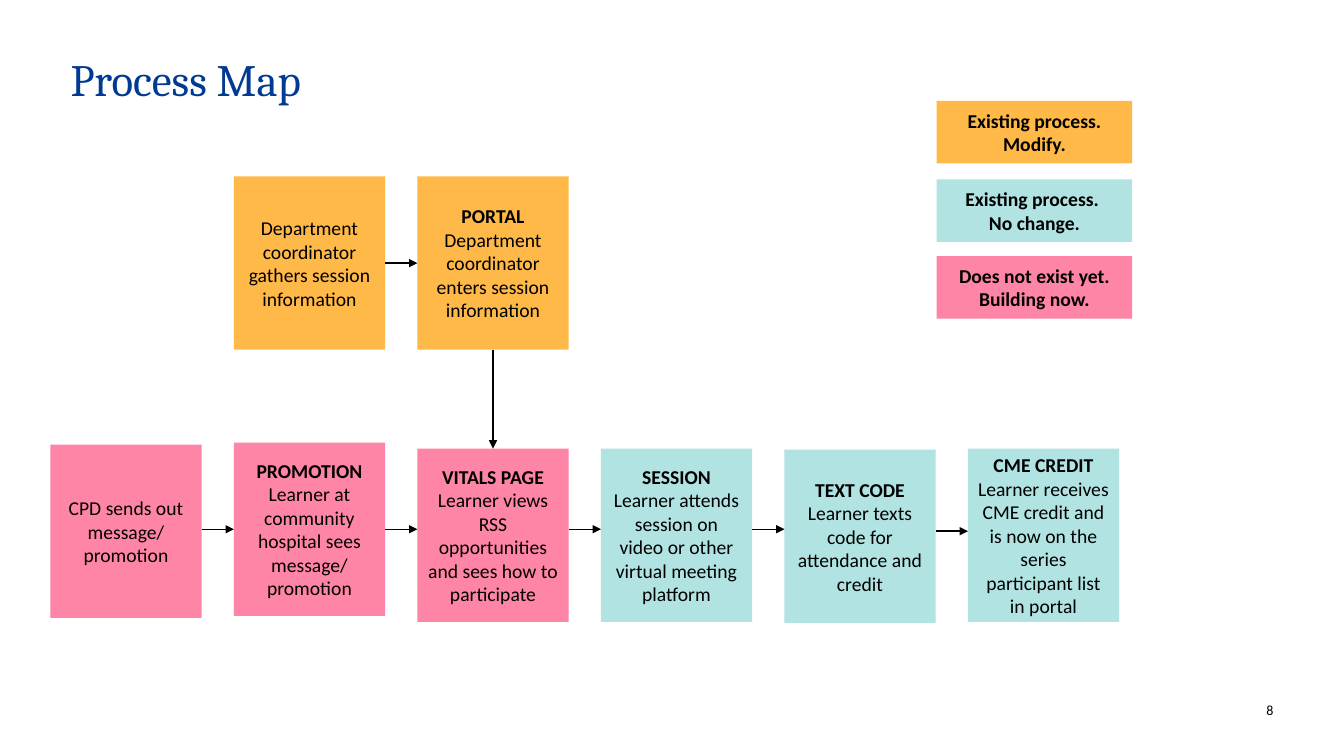
from dataclasses import dataclass

from lxml import etree
from pptx import Presentation
from pptx.dml.color import RGBColor
from pptx.enum.shapes import MSO_CONNECTOR, MSO_SHAPE
from pptx.enum.text import MSO_ANCHOR, MSO_AUTO_SIZE, PP_ALIGN
from pptx.oxml.ns import qn
from pptx.util import Inches, Pt

RECT = MSO_SHAPE.RECTANGLE
STRAIGHT = MSO_CONNECTOR.STRAIGHT
TOP, MIDDLE = MSO_ANCHOR.TOP, MSO_ANCHOR.MIDDLE
LEFT, CENTER, RIGHT = PP_ALIGN.LEFT, PP_ALIGN.CENTER, PP_ALIGN.RIGHT
NO_AUTOSIZE = MSO_AUTO_SIZE.NONE

COLORS = {
    "modify": "FFB948",
    "keep": "B0E3E2",
    "build": "FF85A6",
    "title": "003A93",
    "text": "000000",
}
STEP_LEFT, STEP_PITCH = 0.5, 1.82
STEP_W, STEP_H = 1.5, 1.72
LEGEND_LEFT, LEGEND_W, LEGEND_H = 9.29, 1.94, 0.62


@dataclass
class Step:
    column: int
    top: float
    status: str
    heading: str
    body: str

    @property
    def left(self) -> float:
        return STEP_LEFT + self.column * STEP_PITCH


@dataclass
class LegendItem:
    top: float
    status: str
    lines: list[str]


@dataclass
class Arrow:
    x1: float
    y1: float
    x2: float
    y2: float


PREPARATION = [
    Step(1, 1.75, "modify", "", "Department coordinator gathers session information"),
    Step(2, 1.75, "modify", "PORTAL", "Department coordinator enters session information"),
]
LEARNER_PATH = [
    Step(0, 4.41, "build", "", "CPD sends out message/ promotion"),
    Step(1, 4.39, "build", "PROMOTION",
         "Learner at community hospital sees message/ promotion"),
    Step(2, 4.45, "build", "VITALS PAGE",
         "Learner views RSS opportunities and sees how to participate"),
    Step(3, 4.45, "keep", "SESSION",
         "Learner attends session on video or other virtual meeting platform"),
    Step(4, 4.46, "keep", "TEXT CODE", "Learner texts code for attendance and credit"),
    Step(5, 4.45, "keep", "CME CREDIT",
         "Learner receives CME credit and is now on the series participant list in portal"),
]
LEGEND = [
    LegendItem(1.0, "modify", ["Existing process. Modify."]),
    LegendItem(1.78, "keep", ["Existing process. ", "No change."]),
    LegendItem(2.54, "build", ["Does not exist yet. Building now."]),
]


def format_paragraph(p, size, align, font="Calibri", color="text", bold=False) -> None:
    p.alignment = align
    p.font.name = font
    p.font.size = Pt(size)
    p.font.bold = bold
    p.font.color.rgb = RGBColor.from_string(COLORS[color])


def clear_margins(tf) -> None:
    tf.margin_left = tf.margin_right = tf.margin_top = tf.margin_bottom = 0


def add_box(s, left: float, top: float, width: float, height: float,
            status: str, lines: list[tuple[str, bool]]) -> None:
    """Draw a status-coloured box; each line is a text and whether it is bold."""
    box = s.shapes.add_shape(RECT, Inches(left), Inches(top), Inches(width), Inches(height))
    box.shadow.inherit = False
    box.fill.solid()
    box.fill.fore_color.rgb = RGBColor.from_string(COLORS[status])
    box.line.fill.background()
    tf = box.text_frame
    tf.word_wrap = True
    tf.vertical_anchor = MIDDLE
    for i, (text, bold) in enumerate(lines):
        p = tf.add_paragraph() if i else tf.paragraphs[0]
        p.text = text
        format_paragraph(p, 14, CENTER, bold=bold)


def add_step(s, step: Step) -> None:
    lines = [(step.heading, True)] if step.heading else []
    lines.append((step.body, False))
    add_box(s, step.left, step.top, STEP_W, STEP_H, step.status, lines)


def add_arrow(s, arrow: Arrow) -> None:
    line = s.shapes.add_connector(STRAIGHT, Inches(arrow.x1), Inches(arrow.y1),
                                  Inches(arrow.x2), Inches(arrow.y2))
    line.line.color.rgb = RGBColor.from_string(COLORS["text"])
    line.line.width = Pt(1)
    etree.SubElement(line.line._get_or_add_ln(), qn("a:tailEnd"), type="triangle")
    etree.SubElement(line._element.spPr, qn("a:effectLst"))


def arrow_between(step: Step, following: Step, y: float) -> Arrow:
    return Arrow(step.left + STEP_W, y, following.left, y)


def add_title(s, text: str) -> None:
    title = s.shapes.title
    title.left, title.top = Inches(0.7), Inches(0.57)
    title.width, title.height = Inches(11.92), Inches(1.05)
    tf = title.text_frame
    tf.text = text
    tf.auto_size = NO_AUTOSIZE
    tf.vertical_anchor = TOP
    clear_margins(tf)
    p = tf.paragraphs[0]
    p.line_spacing = 0.9
    format_paragraph(p, 32, LEFT, font="Cambria", color="title")


def add_page_number(s, number: int) -> None:
    box = s.shapes.add_textbox(Inches(12.25), Inches(6.96), Inches(0.38), Inches(0.17))
    tf = box.text_frame
    tf.word_wrap = True
    clear_margins(tf)
    p = tf.paragraphs[0]
    p.text = str(number)
    format_paragraph(p, 10, RIGHT)


def main() -> None:
    prs = Presentation()
    prs.slide_width, prs.slide_height = Inches(13.33), Inches(7.5)
    s = prs.slides.add_slide(prs.slide_layouts[5])
    add_page_number(s, 8)
    add_title(s, "Process Map")

    for step in PREPARATION + LEARNER_PATH:
        add_step(s, step)

    entry, page = PREPARATION[1], LEARNER_PATH[2]
    center = entry.left + STEP_W / 2
    add_arrow(s, Arrow(center, entry.top + STEP_H, center, page.top))
    add_arrow(s, arrow_between(*PREPARATION, 2.61))
    for step, following in zip(LEARNER_PATH, LEARNER_PATH[1:]):
        y = 5.27 if following is LEARNER_PATH[-1] else 5.25
        add_arrow(s, arrow_between(step, following, y))

    for item in LEGEND:
        add_box(s, LEGEND_LEFT, item.top, LEGEND_W, LEGEND_H, item.status,
                [(text, True) for text in item.lines])
    prs.save("out.pptx")


if __name__ == "__main__":
    main()
